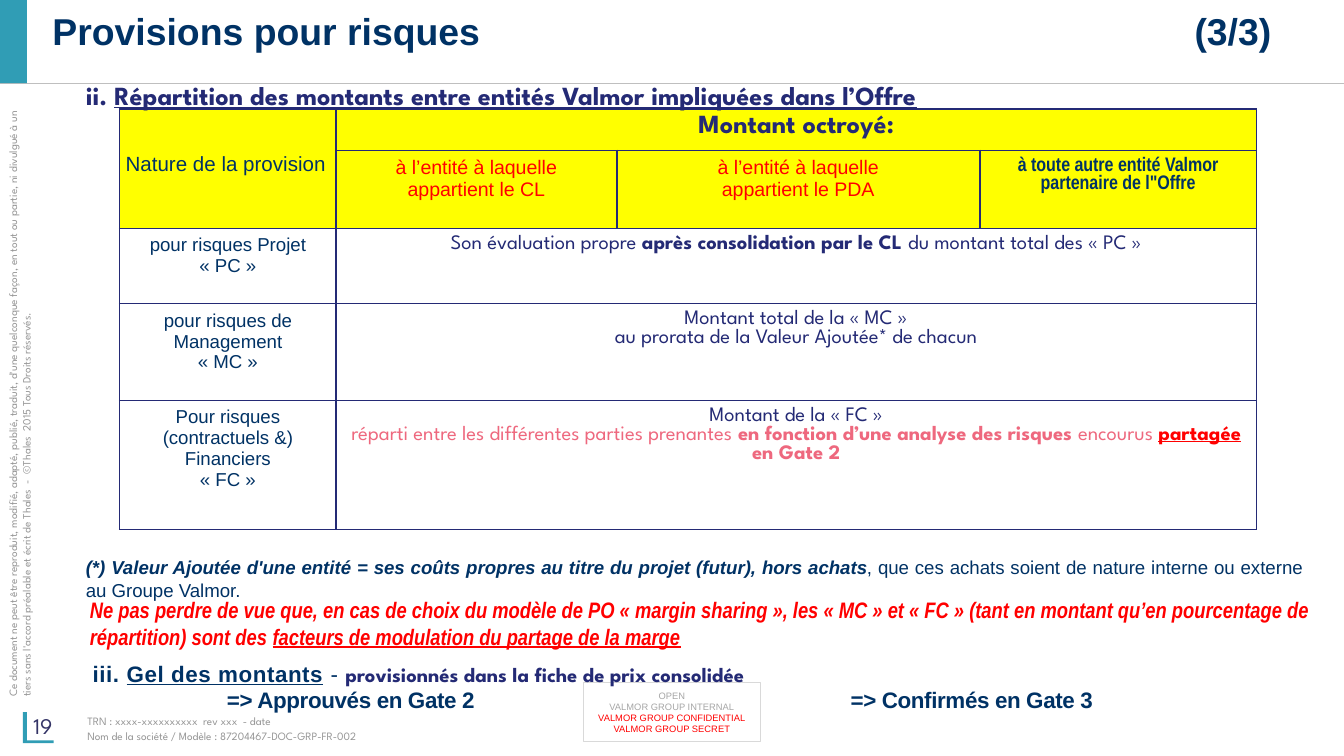
from lxml.etree import SubElement
from pptx import Presentation
from pptx.dml.color import RGBColor
from pptx.enum.shapes import MSO_CONNECTOR, MSO_SHAPE
from pptx.enum.text import MSO_ANCHOR, PP_ALIGN
from pptx.oxml.ns import qn
from pptx.util import Inches, Pt

HUES = dict(navy="003265", blue="242A75", red="FF0000", pink="EE687E",
            teal="309DB5", grey="969696", pale="A6A6A6", rule="BFBFBF",
            edge="D9D9D9", page="333366", gold="FFFF00", white="FFFFFF")
SPARTAN, NARROW = "League Spartan", "Arial Narrow"
BOLD, LINK = dict(bold=True), dict(bold=True, under=True)

TITLE = dict(size=20, bold=True, space=0.9, tabs=[(9.07, "r")])
FOOT = dict(size=6, name=SPARTAN, hue="grey")
STAMP = dict(size=5, hue="pale", align="CENTER")
ALERT = dict(STAMP, hue="red")
HEAD = dict(size=14, name=SPARTAN, hue="blue", bold=True)
WHOM = dict(size=10.5, hue="red", align="CENTER")
KIND = dict(size=10, align="CENTER")
SHARE = dict(size=11, name=SPARTAN, hue="blue", align="CENTER")
NOTE = dict(size=10, align="JUSTIFY", left=0.15)
WARN = dict(size=12, name=NARROW, hue="red", bold=True, italic=True, left=0.18)
GATE = dict(size=12, bold=True, track=-20, tabs=[(1.2, "l"), (5.84, "l")])

COLS = [1.61, 2.09, 2.7, 2.06]
ROWS = [0.31, 0.58, 0.56, 0.72, 0.96]
CELLS = {
    (0, 1): [(dict(HEAD, align="CENTER"), ["Montant octroyé:"])],
    (1, 1): [(WHOM, ["à l’entité à laquelle\nappartient le CL"])],
    (1, 2): [(WHOM, ["à l’entité à laquelle\nappartient le PDA"])],
    (1, 3): [(dict(WHOM, name=NARROW, hue="navy", bold=True),
              ["à toute autre entité Valmor\npartenaire de l\"Offre"])],
    (2, 0): [(KIND, ["pour risques Projet\n« PC »"])],
    (2, 1): [(SHARE, ["Son évaluation propre ", ("après consolidation par le CL ", BOLD),
                      "du montant total des « PC »"])],
    (3, 0): [(KIND, ["pour risques de\nManagement"]), (KIND, ["« MC »"])],
    (3, 1): [(SHARE, ["Montant total de la « MC »\n"
                      "au prorata de la Valeur Ajoutée* de chacun"])],
    (4, 0): [(KIND, ["Pour risques\n(contractuels &)\nFinanciers"]), (KIND, ["« FC »"])],
    (4, 1): [(SHARE, ["Montant de la « FC »"]),
             (dict(SHARE, hue="pink"),
              ["réparti entre les différentes parties prenantes ",
               ("en fonction d’une analyse des risques", BOLD), " encourus ",
               ("partagée", dict(LINK, hue="red")), " ", ("en Gate 2", BOLD)])],
}
MERGES = [((0, 0), (1, 0)), ((0, 1), (0, 3))] + [((r, 1), (r, 3)) for r in (2, 3, 4)]

BOXES = [
    ((0.15, 5.25, 0.86, 0.3), [(dict(size=12, name=SPARTAN, hue="page"), ["19"])],
     dict(anchor="MIDDLE")),
    ((-2.07, 2.87, 4.43, 0.2),
     [(FOOT, ["Ce document ne peut être reproduit, modifié, adapté, publié, traduit, "
              "d'une quelconque façon, en tout ou partie, ni divulgué à un tiers sans "
              "l'accord préalable et écrit de Thales\u00a0 -\u00a0 ©Thales\u00a0 2015 Tous Droits réservés."])],
     dict(anchor="MIDDLE", inset=0, turn=270)),
    ((0.65, 5.31, 5.99, 0.22),
     [(FOOT, ["TRN : xxxx-xxxxxxxxxx\u00a0 rev xxx\u00a0 - date"]),
      (dict(FOOT, gap=1.2), ["Nom de la société / Modèle : 87204467-DOC-GRP-FR-002"])],
     dict(anchor="MIDDLE", inset=0)),
    ((0.65, 1.01, 2.06, 0.35),
     [(dict(size=11, align="CENTER", space=Pt(18)), ["Nature de la provision"])], {}),
    ((0.39, 4.09, 9.4, 0.45),
     [(NOTE, [("(*) Valeur Ajoutée d'une entité = ses coûts propres au titre du projet "
               "(futur), hors achats", dict(bold=True, italic=True)),
              ", que ces achats soient de nature interne ou externe au Groupe Valmor."])], {}),
    ((0.39, 4.39, 9.6, 0.5),
     [(WARN, ["Ne pas perdre de vue que, en cas de choix du modèle de PO « margin sharing », "
              "les « MC » et « FC » (tant en montant qu’en pourcentage de répartition) sont des ",
              ("facteurs de modulation du partage de la marge", dict(under=True))])], {}),
    ((0.39, 4.86, 9.32, 0.5),
     [(dict(size=12, left=0.2),
       [("iii. ", dict(BOLD, track=30)), ("Gel des montants", dict(LINK, track=30)),
        (" - ", dict(track=30)),
        ("provisionnés dans la fiche de prix consolidée",
         dict(HEAD, size=11))]),
      (GATE, ["\t=> Approuvés en Gate 2\t=> Confirmés en Gate 3"])], {}),
    ((0.39, 0.54, 9.46, 0.34),
     [(dict(HEAD, left=0.15),
       ["ii. ", ("Répartition des montants entre entités Valmor impliquées dans l’Offre",
                 dict(under=True))])], {}),
]
MARKS = [(STAMP, ["OPEN"]), (STAMP, ["VALMOR GROUP INTERNAL"]),
         (ALERT, ["VALMOR GROUP CONFIDENTIAL"]), (ALERT, ["VALMOR GROUP SECRET"])]
HOOK = [(0.2, 5.3), (0.17, 5.3), (0.17, 5.53), (0.4, 5.53), (0.4, 5.51), (0.2, 5.51)]


def rgb(hue):
    return RGBColor.from_string(HUES[hue])


def dress(font, look):
    if "size" in look:
        font.size = Pt(look["size"])
    if "name" in look:
        font.name = look["name"]
    if "hue" in look:
        font.color.rgb = rgb(look["hue"])
    for key, attr in (("bold", "bold"), ("italic", "italic"), ("under", "underline")):
        if key in look:
            setattr(font, attr, look[key])


def write(frame, paras):
    frame.word_wrap = True
    for i, (look, runs) in enumerate(paras):
        para = frame.paragraphs[0] if i == 0 else frame.add_paragraph()
        para.alignment = getattr(PP_ALIGN, look.get("align", "LEFT"))
        para.line_spacing = look.get("space")
        if "gap" in look:
            para.space_before = Pt(look["gap"])
        props = para._p.get_or_add_pPr()
        if "left" in look:
            props.set("marL", str(Inches(look["left"])))
        if "tabs" in look:
            tabs = SubElement(props, qn("a:tabLst"))
            for pos, side in look["tabs"]:
                SubElement(tabs, qn("a:tab"), pos=str(Inches(pos)), algn=side)
        dress(para.font, dict(dict(name="Arial", hue="navy", bold=False), **look))
        for item in runs:
            text, own = (item, {}) if isinstance(item, str) else item
            for j, part in enumerate(text.split("\n")):
                if j:
                    para.add_line_break()
                run = para.add_run()
                run.text = part
                dress(run.font, own)
                track = own.get("track", look.get("track"))
                if track:
                    run._r.get_or_add_rPr().set("spc", str(track))


def place(shape, spot):
    shape.left, shape.top, shape.width, shape.height = map(Inches, spot)


def paint(shape, fill):
    shape.shadow.inherit = False
    shape.fill.solid()
    shape.fill.fore_color.rgb = rgb(fill)
    shape.line.fill.background()


def frame_cell(cell):
    props = cell._tc.get_or_add_tcPr()
    for i, tag in enumerate(("a:lnL", "a:lnR", "a:lnT", "a:lnB")):
        line = props.makeelement(qn(tag), {"w": str(Pt(1))})
        fill = SubElement(line, qn("a:solidFill"))
        SubElement(fill, qn("a:srgbClr"), val=HUES["blue"])
        props.insert(i, line)


def add_grid(shapes):
    spot = map(Inches, (0.89, 0.81, sum(COLS), sum(ROWS)))
    grid = shapes.add_table(len(ROWS), len(COLS), *spot).table
    grid.first_row = grid.horz_banding = False
    for col, wide in zip(grid.columns, COLS):
        col.width = Inches(wide)
    for r, tall in enumerate(ROWS):
        grid.rows[r].height = Inches(tall)
        for c in range(len(COLS)):
            cell = grid.cell(r, c)
            if r < 2:
                cell.fill.solid()
                cell.fill.fore_color.rgb = rgb("gold")
            else:
                cell.fill.background()
            frame_cell(cell)
            write(cell.text_frame, CELLS.get((r, c), [(KIND, [])]))
    for start, end in MERGES:
        grid.cell(*start).merge(grid.cell(*end))


def main():
    """Build the slide on risk provisions and save it."""
    deck = Presentation()
    deck.slide_width, deck.slide_height = Inches(10), Inches(10 * 9 / 16)
    slide = deck.slides.add_slide(deck.slide_layouts[5])
    shapes = slide.shapes

    rule = shapes.add_connector(MSO_CONNECTOR.STRAIGHT, 0, Inches(0.62), Inches(10), Inches(0.62))
    rule.line.color.rgb = rgb("rule")
    rule.line.width = Pt(0.75)
    SubElement(rule._element.spPr, qn("a:effectLst"))

    band = shapes.add_shape(MSO_SHAPE.RECTANGLE, 0, Inches(-0.01), Inches(0.2), Inches(0.63))
    paint(band, "teal")
    dots = [(Inches(x), Inches(y)) for x, y in HOOK]
    pen = shapes.build_freeform(*dots[0])
    pen.add_line_segments(dots[1:])
    paint(pen.convert_to_shape(), "teal")

    stamp = shapes.add_shape(MSO_SHAPE.RECTANGLE, *map(Inches, (4.34, 5.08, 1.32, 0.44)))
    paint(stamp, "white")
    tone = stamp._element.spPr.find(".//" + qn("a:srgbClr"))
    SubElement(tone, qn("a:alpha"), val="50000")
    stamp.line.color.rgb = rgb("edge")
    stamp.line.width = Pt(0.5)
    stamp.text_frame.vertical_anchor = MSO_ANCHOR.MIDDLE
    write(stamp.text_frame, MARKS)

    title = shapes.title
    place(title, (0.29, 0, 9.49, 0.5))
    title.text_frame.vertical_anchor = MSO_ANCHOR.MIDDLE
    write(title.text_frame, [(TITLE, ["Provisions pour risques\t(3/3)"])])

    add_grid(shapes)
    for spot, paras, opts in BOXES:
        box = shapes.add_textbox(*map(Inches, spot))
        box.rotation = opts.get("turn", 0)
        frame = box.text_frame
        frame.vertical_anchor = getattr(MSO_ANCHOR, opts.get("anchor", "TOP"))
        if "inset" in opts:
            frame.margin_left = frame.margin_right = Inches(opts["inset"])
            frame.margin_top = frame.margin_bottom = Inches(opts["inset"])
        write(frame, paras)
    deck.save("out.pptx")


if __name__ == "__main__":
    main()
